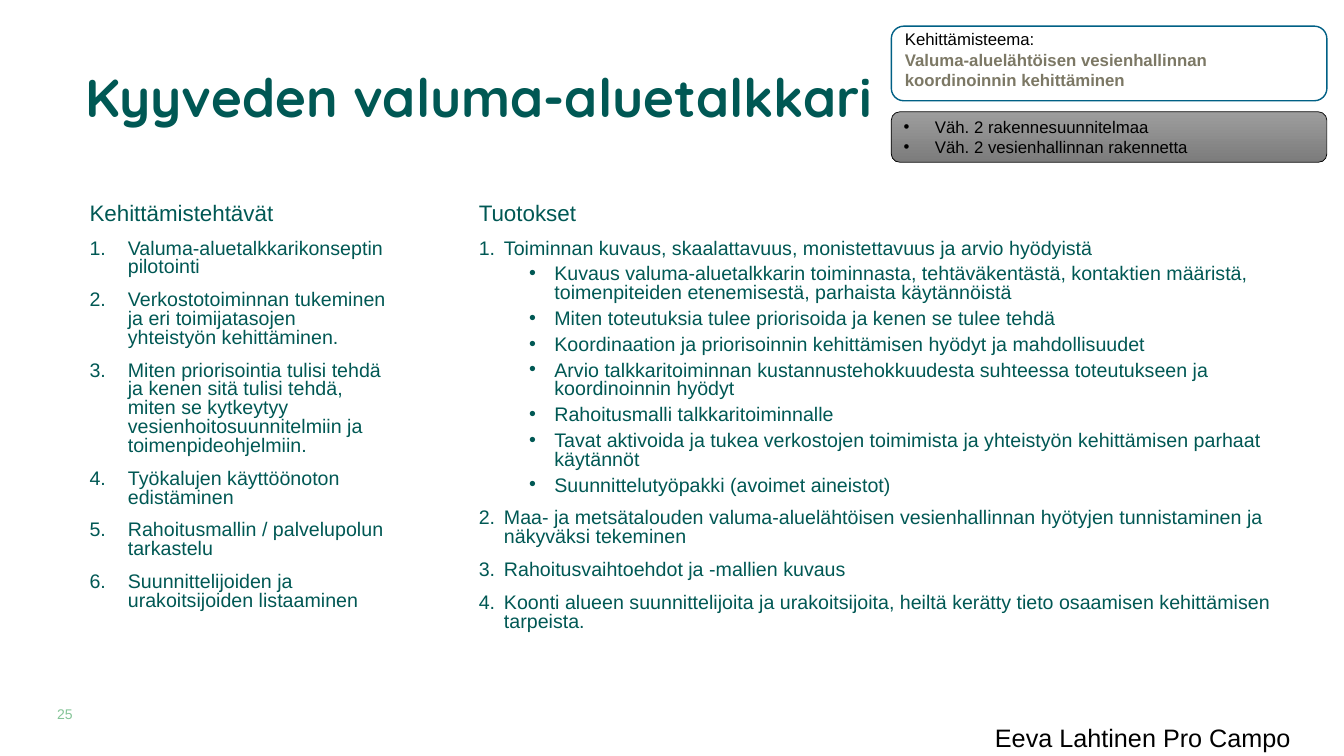
import pptx
import pptx.util
import pptx.dml.color
import pptx.enum.shapes
import pptx.enum.text
import lxml.etree
from dataclasses import dataclass

Inches = pptx.util.Inches
Pt = pptx.util.Pt
RGB = pptx.dml.color.RGBColor.from_string
ANCHOR = pptx.enum.text.MSO_ANCHOR
ALIGN = pptx.enum.text.PP_ALIGN
A = "{http://schemas.openxmlformats.org/drawingml/2006/main}"


@dataclass(frozen=True)
class Theme:
    green: str = "005854"
    pale_green: str = "84C497"
    black: str = "000000"
    white: str = "FFFFFF"
    olive: str = "7C7865"
    blue: str = "006085"
    gray_top: str = "9D9D9D"
    gray_bottom: str = "7C7C7C"
    title_font: str = "Quicksand"
    body_font: str = "Arial"
    title: int = 38
    footer: int = 18
    heading: int = 16
    body: int = 14
    card: int = 12
    number: int = 10


T = Theme()

TASKS = [
    (0, "Valuma-aluetalkkarikonseptin pilotointi"),
    (0, "Verkostotoiminnan tukeminen ja eri toimijatasojen yhteistyön kehittäminen."),
    (0, "Miten priorisointia tulisi tehdä ja kenen sitä tulisi tehdä, miten se kytkeytyy "
        "vesienhoitosuunnitelmiin ja toimenpideohjelmiin."),
    (0, "Työkalujen käyttöönoton edistäminen"),
    (0, "Rahoitusmallin / palvelupolun tarkastelu"),
    (0, "Suunnittelijoiden ja urakoitsijoiden listaaminen"),
]
OUTPUTS = [
    (0, "Toiminnan kuvaus, skaalattavuus, monistettavuus ja arvio hyödyistä"),
    (1, "Kuvaus valuma-aluetalkkarin toiminnasta, tehtäväkentästä, kontaktien määristä, "
        "toimenpiteiden etenemisestä, parhaista käytännöistä"),
    (1, "Miten toteutuksia tulee priorisoida ja kenen se tulee tehdä"),
    (1, "Koordinaation ja priorisoinnin kehittämisen hyödyt ja mahdollisuudet"),
    (1, "Arvio talkkaritoiminnan kustannustehokkuudesta suhteessa toteutukseen ja "
        "koordinoinnin hyödyt"),
    (1, "Rahoitusmalli talkkaritoiminnalle"),
    (1, "Tavat aktivoida ja tukea verkostojen toimimista ja yhteistyön kehittämisen "
        "parhaat käytännöt"),
    (1, "Suunnittelutyöpakki (avoimet aineistot)"),
    (0, "Maa- ja metsätalouden valuma-aluelähtöisen vesienhallinnan hyötyjen "
        "tunnistaminen ja näkyväksi tekeminen"),
    (0, "Rahoitusvaihtoehdot ja -mallien kuvaus"),
    (0, "Koonti alueen suunnittelijoita ja urakoitsijoita, heiltä kerätty tieto "
        "osaamisen kehittämisen tarpeista."),
]


def style(p, size, color, font=T.body_font, bold=False):
    for r in p.runs:
        r.font.size = Pt(size)
        r.font.name = font
        r.font.bold = bold
        r.font.color.rgb = RGB(color)


def mark(p, margin, hang, numbered=False):
    pPr = p._p.get_or_add_pPr()
    pPr.set("marL", str(Inches(margin)))
    pPr.set("indent", str(-Inches(hang)))
    if numbered:
        lxml.etree.SubElement(pPr, A + "buAutoNum", type="arabicPeriod")
    else:
        lxml.etree.SubElement(pPr, A + "buFont", typeface="Arial")
        lxml.etree.SubElement(pPr, A + "buChar", char="•")


def text_box(s, box, anchor=ANCHOR.TOP):
    tf = s.shapes.add_textbox(*map(Inches, box)).text_frame
    tf.word_wrap = True
    tf.vertical_anchor = anchor
    return tf


def title(s, box, text):
    p = text_box(s, box, ANCHOR.MIDDLE).paragraphs[0]
    p.text = text
    p.line_spacing = 0.9
    style(p, T.title, T.green, T.title_font, True)


def list_column(s, box, heading, items, hang):
    tf = text_box(s, box)
    tf.text = heading
    style(tf.paragraphs[0], T.heading, T.green)
    for level, text in items:
        p = tf.add_paragraph()
        p.text = text
        p.level = level
        style(p, T.body, T.green)
    for p in tf.paragraphs:
        p.line_spacing = 0.8
        p.space_before = Pt(5 if p.level else 10)
    for p, (level, _) in zip(tf.paragraphs[1:], items):
        mark(p, hang + 0.5 * level, hang, numbered=level == 0)


def card(s, box, line_color, line_width, lines):
    sp = s.shapes.add_shape(pptx.enum.shapes.MSO_SHAPE.ROUNDED_RECTANGLE,
                            *map(Inches, box))
    sp.shadow.inherit = False
    sp.line.color.rgb = RGB(line_color)
    sp.line.width = Pt(line_width)
    tf = sp.text_frame
    tf.word_wrap = True
    tf.vertical_anchor = ANCHOR.MIDDLE
    tf.text = "\n".join(lines)
    for p in tf.paragraphs:
        p.alignment = ALIGN.LEFT
        style(p, T.card, T.black)
    return sp


def theme_card(s, box):
    sp = card(s, box, T.blue, 1, [
        "Kehittämisteema:",
        "Valuma-aluelähtöisen vesienhallinnan koordinoinnin kehittäminen"])
    sp.fill.solid()
    sp.fill.fore_color.rgb = RGB(T.white)
    tf = sp.text_frame
    tf.margin_top, tf.margin_bottom = Inches(0), Inches(0.08)
    style(tf.paragraphs[1], T.card, T.olive, bold=True)


def target_card(s, box):
    sp = card(s, box, T.black, 0.5, [
        "Väh. 2 rakennesuunnitelmaa", "Väh. 2 vesienhallinnan rakennetta"])
    sp.fill.gradient()
    sp.fill.gradient_angle = 270
    for stop, color in zip(sp.fill.gradient_stops, (T.gray_top, T.gray_bottom)):
        stop.color.rgb = RGB(color)
    for p in sp.text_frame.paragraphs:
        mark(p, 0.31, 0.31)


def slide_number(s, box, text):
    tf = text_box(s, box, ANCHOR.BOTTOM)
    tf.margin_left = tf.margin_right = tf.margin_top = tf.margin_bottom = 0
    p = tf.paragraphs[0]
    p.text = text
    p.alignment = ALIGN.RIGHT
    style(p, T.number, T.pale_green)


def presenter(s, box, text):
    p = text_box(s, box).paragraphs[0]
    p.text = text
    style(p, T.footer, T.black)


def main():
    prs = pptx.Presentation()
    prs.slide_width, prs.slide_height = Inches(13.33), Inches(7.5)
    s = prs.slides.add_slide(prs.slide_layouts[6])
    slide_number(s, (0.07, 6.97, 0.65, 0.2), "25")
    title(s, (0.75, 0.4, 11.81, 1.19), "Kyyveden valuma-aluetalkkari")
    list_column(s, (0.79, 1.98, 3.16, 4.47), "Kehittämistehtävät", TASKS, 0.38)
    list_column(s, (4.65, 1.98, 8.19, 4.47), "Tuotokset", OUTPUTS, 0.25)
    theme_card(s, (8.84, 0.26, 4.32, 0.74))
    target_card(s, (8.84, 1.11, 4.32, 0.5))
    presenter(s, (9.77, 7.12, 3.4, 0.38), "Eeva Lahtinen Pro Campo")
    prs.save("out.pptx")


if __name__ == "__main__":
    main()
